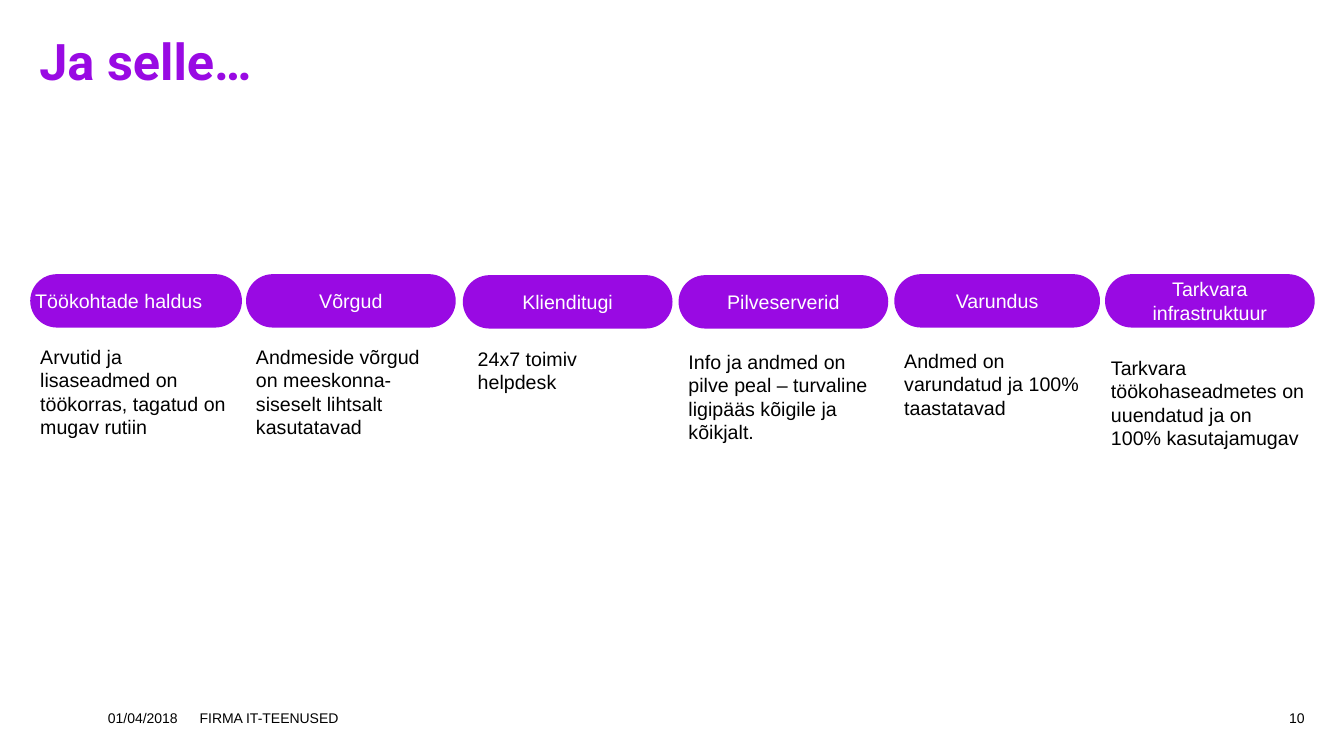
import dataclasses

import pptx
import pptx.dml.color
import pptx.enum.shapes
import pptx.enum.text
import pptx.util

PURPLE, WHITE, BLACK = "990AE3", "FFFFFF", "000000"
GRID_LEFT, GRID_TOP, PITCH = 0.3, 2.72, 2.14
PILL_HEIGHT = 0.53
FOOTER_TOP, FOOTER_HEIGHT = 7.04, 0.17

ALIGN = pptx.enum.text.PP_ALIGN
ANCHOR = pptx.enum.text.MSO_ANCHOR
inches = pptx.util.Inches


@dataclasses.dataclass(frozen=True)
class Service:
    """A grid column; the nudges are offsets from its left edge and its row."""
    name: str
    description: str
    text_top: float
    text_width: float
    text_height: float = 1.04
    pill_width: float = 2.08
    pill_nudge: tuple[float, float] = (0, 0)
    text_nudge: float = 0


@dataclasses.dataclass(frozen=True)
class FooterItem:
    text: str
    left: float
    width: float
    align: ALIGN = ALIGN.LEFT


SERVICES = [
    Service("Töökohtade haldus\t",
            "Arvutid ja lisaseadmed on töökorras, tagatud on mugav rutiin",
            3.37, 2.08, pill_width=2.1),
    Service("Võrgud",
            "Andmeside võrgud on meeskonna-siseselt lihtsalt kasutatavad",
            3.37, 2.02),
    Service("Klienditugi", "24x7 toimiv helpdesk",
            3.39, 1.64, 0.57, pill_nudge=(0.01, 0.01), text_nudge=0.06),
    Service("Pilveserverid",
            "Info ja andmed on pilve peal – turvaline ligipääs kõigile ja kõikjalt.",
            3.42, 2.08, pill_nudge=(0.01, 0.01), text_nudge=0.01),
    Service("Varundus", "Andmed on varundatud ja 100% taastatavad",
            3.41, 2.04, 0.81, pill_width=2.04, pill_nudge=(0.01, 0), text_nudge=0.01),
    Service("Tarkvara\ninfrastruktuur",
            "Tarkvara töökohaseadmetes on uuendatud ja on 100% kasutajamugav",
            3.48, 2.12, pill_nudge=(-0.04, 0), text_nudge=-0.08),
]

FOOTER = [
    FooterItem("01/04/2018", 1.07, 0.91),
    FooterItem("FIRMA IT-TEENUSED", 1.98, 10.12),
    FooterItem("10", 12.1, 0.84, ALIGN.RIGHT),
]


def rgb(color: str) -> pptx.dml.color.RGBColor:
    return pptx.dml.color.RGBColor.from_string(color)


def set_insets(tf, horizontal: float, vertical: float) -> None:
    tf.margin_left = tf.margin_right = inches(horizontal)
    tf.margin_top = tf.margin_bottom = inches(vertical)


def write(tf, text: str, size: float, color: str, align: ALIGN = ALIGN.LEFT,
          font: str = "Arial", bold: bool = False) -> None:
    tf.text = text
    for p in tf.paragraphs:
        p.alignment = align
        for r in p.runs:
            r.font.name = font
            r.font.size = pptx.util.Pt(size)
            r.font.bold = bold
            r.font.color.rgb = rgb(color)


def add_title(slide, text: str) -> None:
    sp = slide.shapes.title
    sp.left, sp.top, sp.width, sp.height = map(inches, (0.39, 0.39, 12.19, 0.92))
    tf = sp.text_frame
    set_insets(tf, 0, 0)
    tf.vertical_anchor = ANCHOR.TOP
    tf.auto_size = pptx.enum.text.MSO_AUTO_SIZE.NONE
    write(tf, text, 36, PURPLE, font="Roboto", bold=True)
    tf.paragraphs[0].line_spacing = 0.85


def add_pill(slide, service: Service, column: int) -> None:
    dx, dy = service.pill_nudge
    sp = slide.shapes.add_shape(
        pptx.enum.shapes.MSO_SHAPE.ROUNDED_RECTANGLE,
        inches(GRID_LEFT + column * PITCH + dx), inches(GRID_TOP + dy),
        inches(service.pill_width), inches(PILL_HEIGHT))
    sp.adjustments[0] = 0.5
    sp.shadow.inherit = False
    sp.fill.solid()
    sp.fill.fore_color.rgb = rgb(PURPLE)
    sp.line.fill.background()
    tf = sp.text_frame
    set_insets(tf, 0.39, 0.2)
    tf.word_wrap = False
    tf.vertical_anchor = ANCHOR.MIDDLE
    write(tf, service.name, 14, WHITE, ALIGN.CENTER)


def add_description(slide, service: Service, column: int) -> None:
    sp = slide.shapes.add_textbox(
        inches(GRID_LEFT + column * PITCH + service.text_nudge),
        inches(service.text_top),
        inches(service.text_width), inches(service.text_height))
    tf = sp.text_frame
    tf.word_wrap = True
    tf.auto_size = pptx.enum.text.MSO_AUTO_SIZE.SHAPE_TO_FIT_TEXT
    write(tf, service.description, 14, BLACK)


def add_footer_item(slide, item: FooterItem) -> None:
    sp = slide.shapes.add_textbox(inches(item.left), inches(FOOTER_TOP),
                                  inches(item.width), inches(FOOTER_HEIGHT))
    tf = sp.text_frame
    set_insets(tf, 0, 0)
    tf.word_wrap = True
    tf.vertical_anchor = ANCHOR.MIDDLE
    write(tf, item.text, 10, BLACK, item.align)


def main() -> None:
    prs = pptx.Presentation()
    prs.slide_width, prs.slide_height = inches(13.33), inches(7.5)
    slide = prs.slides.add_slide(prs.slide_layouts.get_by_name("Title Only"))
    add_title(slide, "Ja selle…")
    for item in FOOTER:
        add_footer_item(slide, item)
    for column, service in enumerate(SERVICES):
        add_pill(slide, service, column)
        add_description(slide, service, column)
    prs.save("out.pptx")


if __name__ == "__main__":
    main()
